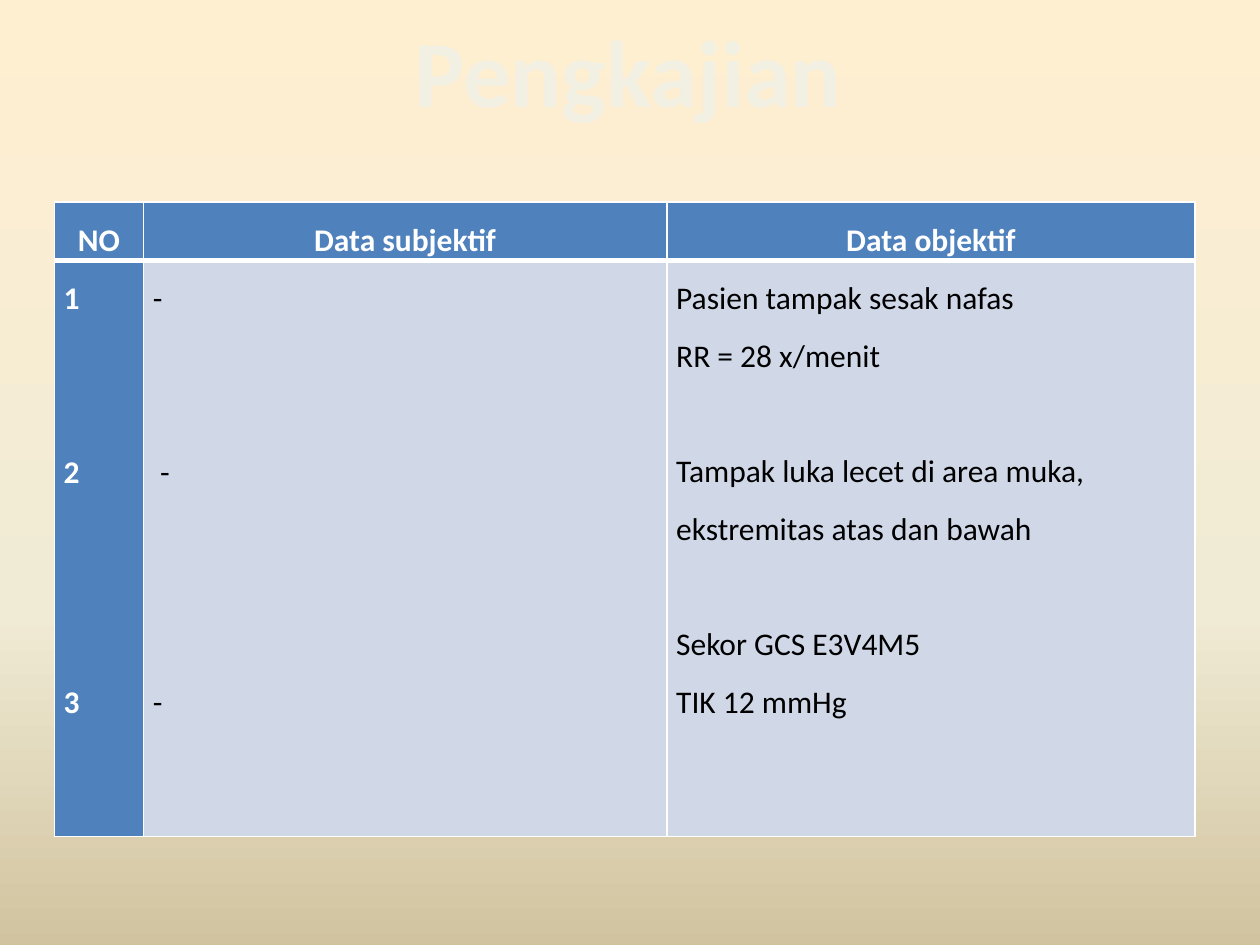
from copy import deepcopy
from dataclasses import dataclass

from lxml.etree import SubElement
from pptx import Presentation
from pptx.dml.color import RGBColor
from pptx.enum.text import MSO_ANCHOR, PP_ALIGN
from pptx.oxml.ns import qn
from pptx.slide import Slide
from pptx.table import _Cell
from pptx.util import Pt


@dataclass(frozen=True)
class Theme:
    font: str = "Calibri"
    title: int = 54
    body: int = 18
    pale: str = "F2EFE3"
    white: str = "FFFFFF"
    black: str = "000000"
    blue: str = "4F81BD"
    light: str = "D0D8E8"
    stops: tuple = ((0, "FFEFD1"), (0.65, "F0EBD5"), (1, "D1C39F"))


@dataclass(frozen=True)
class Line:
    text: str
    gap: int = 0  # empty lines above


@dataclass(frozen=True)
class Entry:
    lines: tuple
    fill: str
    ink: str
    bold: bool = False
    align: PP_ALIGN = PP_ALIGN.LEFT
    base: int = 1  # width of the bottom border


THEME = Theme()
PITCH = 33  # height of one table line


def paint(slide: Slide) -> None:
    """Fill the background with a vertical gradient."""
    fill = slide.background.fill
    fill.gradient()
    fill.gradient_angle = 270
    group = next(slide._element.iter(qn("a:gsLst")))
    group.append(deepcopy(group[-1]))
    for stop, (place, color) in zip(fill.gradient_stops, THEME.stops):
        stop.position = place
        stop.color.rgb = RGBColor.from_string(color)


def style(para, size: int, color: str, bold: bool) -> None:
    for run in para.runs:
        font = run.font
        font.name, font.size, font.bold = THEME.font, Pt(size), bold
        font.color.rgb = RGBColor.from_string(color)


def border(cell: _Cell, base: int) -> None:
    """Draw white borders; they must precede the fill in the XML."""
    props = cell._tc.get_or_add_tcPr()
    for index, side in enumerate(("lnL", "lnR", "lnT", "lnB")):
        width = base if side == "lnB" else 1
        line = SubElement(props, qn(f"a:{side}"), w=str(Pt(width)))
        solid = SubElement(line, qn("a:solidFill"))
        SubElement(solid, qn("a:srgbClr"), val=THEME.white)
        props.insert(index, line)


def write(cell: _Cell, entry: Entry) -> None:
    cell.fill.solid()
    cell.fill.fore_color.rgb = RGBColor.from_string(entry.fill)
    border(cell, entry.base)
    cell.margin_left = cell.margin_right = Pt(5.4)
    cell.margin_top = cell.margin_bottom = 0
    cell.vertical_anchor = MSO_ANCHOR.TOP
    frame = cell.text_frame
    frame.text = "\n".join(line.text for line in entry.lines)
    for para, line in zip(frame.paragraphs, entry.lines):
        para.alignment = entry.align
        para.line_spacing = 1.5
        para.space_before = Pt(line.gap * PITCH)
        style(para, THEME.body, entry.ink, entry.bold)


def head(text: str) -> Entry:
    return Entry((Line(text),), THEME.blue, THEME.white, True,
                 PP_ALIGN.CENTER, 3)


# Table content
ROWS = (
    (head("NO"), head("Data subjektif"), head("Data objektif")),
    (
        Entry((Line("1"), Line("2", 2), Line("3", 3)),
              THEME.blue, THEME.white, True),
        Entry((Line("-"), Line(" -", 2), Line("-", 3)),
              THEME.light, THEME.black),
        Entry((Line("Pasien tampak sesak nafas"),
               Line("RR = 28 x/menit"),
               Line("Tampak luka lecet di area muka, "
                    "ekstremitas atas dan bawah", 1),
               Line("Sekor GCS E3V4M5", 1),
               Line("TIK 12 mmHg")),
              THEME.light, THEME.black),
    ),
)
WIDTHS = (51, 299, 302)
HEIGHTS = (33.5, 329)


def main() -> None:
    deck = Presentation()
    deck.slide_width, deck.slide_height = Pt(720), Pt(540)
    slide = deck.slides.add_slide(deck.slide_layouts[5])
    paint(slide)

    # Title
    title = slide.shapes.title
    title.left, title.top = Pt(35), Pt(4)
    title.width, title.height = Pt(648), Pt(72)
    title.text_frame.text = "Pengkajian"
    title.text_frame.vertical_anchor = MSO_ANCHOR.MIDDLE
    para = title.text_frame.paragraphs[0]
    para.alignment = PP_ALIGN.CENTER
    style(para, THEME.title, THEME.pale, True)

    # Assessment table
    table = slide.shapes.add_table(
        len(ROWS), len(WIDTHS), Pt(31), Pt(115.5),
        Pt(sum(WIDTHS)), Pt(sum(HEIGHTS))).table
    for column, width in zip(table.columns, WIDTHS):
        column.width = Pt(width)
    for row, height, entries in zip(table.rows, HEIGHTS, ROWS):
        row.height = Pt(height)
        for cell, entry in zip(row.cells, entries):
            write(cell, entry)

    deck.save("out.pptx")


if __name__ == "__main__":
    main()
